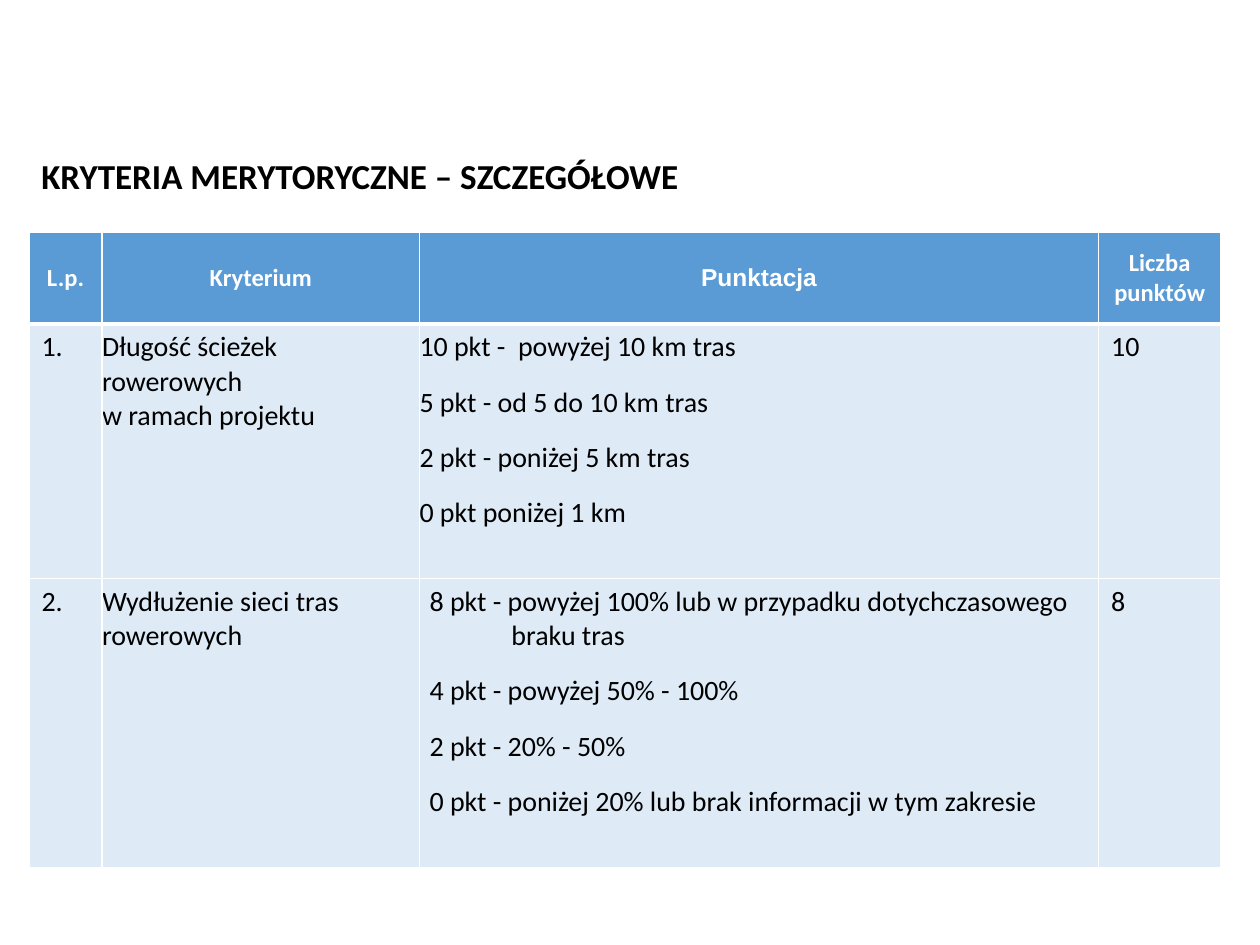
from dataclasses import dataclass

from pptx import Presentation
from pptx.dml.color import RGBColor
from pptx.enum import text
from pptx.oxml import parse_xml
from pptx.oxml.ns import nsdecls
from pptx.util import Inches, Pt

BLACK = RGBColor(0x00, 0x00, 0x00)
WHITE = RGBColor(0xFF, 0xFF, 0xFF)
HEADER_BLUE = RGBColor(0x5B, 0x9B, 0xD5)
ROW_BLUE = RGBColor(0xDE, 0xEB, 0xF7)

COLUMN_WIDTHS = (0.58, 2.52, 5.39, 0.97)
ROW_HEIGHTS = (0.73, 2.02, 2.3)
HEADINGS = ("L.p.", "Kryterium", "Punktacja", "Liczba punktów")


@dataclass
class Criterion:
    number: str
    name: str
    scoring: list[str]
    points: str
    scoring_margin: float = 0


@dataclass
class CellStyle:
    fill: RGBColor
    color: RGBColor
    size: int
    font: str = "Calibri"
    bold: bool = False
    centered: bool = False
    side_margin: float = 0.1
    spacing: int = 0
    bottom_border: int = 1


CRITERIA = [
    Criterion("1.", "Długość ścieżek rowerowych \vw ramach projektu",
              ["10 pkt -  powyżej 10 km tras", "5 pkt - od 5 do 10 km tras",
               "2 pkt - poniżej 5 km tras", "0 pkt poniżej 1 km"], "10"),
    Criterion("2.", "Wydłużenie sieci tras rowerowych",
              ["8 pkt - powyżej 100% lub w przypadku dotychczasowego\vbraku tras",
               "4 pkt - powyżej 50% - 100%", "2 pkt - 20% - 50%",
               "0 pkt - poniżej 20% lub brak informacji w tym zakresie"], "8", 0.08),
]


def format_font(font, name: str, size: int, color: RGBColor, bold: bool) -> None:
    font.name = name
    font.size = Pt(size)
    font.color.rgb = color
    font.bold = bold


def add_borders(cell, bottom: int) -> None:
    properties = cell._tc.get_or_add_tcPr()
    for side, width in (("L", 1), ("R", 1), ("T", 1), ("B", bottom)):
        properties.append(parse_xml(
            f'<a:ln{side} {nsdecls("a")} w="{Pt(width)}"><a:solidFill>'
            f'<a:srgbClr val="{WHITE}"/></a:solidFill></a:ln{side}>'))


def fill_cell(cell, lines: list[str], style: CellStyle) -> None:
    add_borders(cell, style.bottom_border)
    cell.fill.solid()
    cell.fill.fore_color.rgb = style.fill
    cell.margin_left = cell.margin_right = Inches(style.side_margin)
    cell.margin_top = cell.margin_bottom = Inches(0.05)
    cell.vertical_anchor = (text.MSO_ANCHOR.MIDDLE if style.centered
                            else text.MSO_ANCHOR.TOP)
    cell.text_frame.text = lines[0]
    for line in lines[1:]:
        cell.text_frame.add_paragraph().text = line
    for index, paragraph in enumerate(cell.text_frame.paragraphs):
        paragraph.alignment = (text.PP_ALIGN.CENTER if style.centered
                               else text.PP_ALIGN.LEFT)
        paragraph.space_before = Pt(style.spacing if index else 0)
        paragraph.space_after = Pt(style.spacing)
        for run in paragraph.runs:
            format_font(run.font, style.font, style.size, style.color, style.bold)


def hang_indent(paragraph, width: float) -> None:
    properties = paragraph._p.get_or_add_pPr()
    properties.set("marL", str(Inches(width)))
    properties.set("indent", str(-Inches(width)))


def add_title(slide) -> None:
    title = slide.shapes.add_textbox(Inches(0.23), Inches(1.17),
                                     Inches(5.42), Inches(0.44))
    frame = title.text_frame
    frame.text = "KRYTERIA MERYTORYCZNE – SZCZEGÓŁOWE"
    frame.word_wrap = False
    frame.auto_size = text.MSO_AUTO_SIZE.SHAPE_TO_FIT_TEXT
    frame.vertical_anchor = text.MSO_ANCHOR.MIDDLE
    format_font(frame.paragraphs[0].runs[0].font, "Calibri", 20, BLACK, True)


def add_criteria_table(slide) -> None:
    table = slide.shapes.add_table(
        len(ROW_HEIGHTS), len(COLUMN_WIDTHS), Inches(0.23), Inches(1.84),
        Inches(sum(COLUMN_WIDTHS)), Inches(sum(ROW_HEIGHTS))).table
    for column, width in zip(table.columns, COLUMN_WIDTHS):
        column.width = Inches(width)
    for row, height in zip(table.rows, ROW_HEIGHTS):
        row.height = Inches(height)

    # Header row
    for column, heading in enumerate(HEADINGS):
        font = "Arial" if heading == "Punktacja" else "Calibri"
        fill_cell(table.cell(0, column), [heading],
                  CellStyle(HEADER_BLUE, WHITE, 14, font, bold=True,
                            centered=True, bottom_border=3))

    # Criteria rows
    plain = CellStyle(ROW_BLUE, BLACK, 16)
    flush = CellStyle(ROW_BLUE, BLACK, 16, side_margin=0, spacing=6)
    for row, criterion in enumerate(CRITERIA, start=1):
        scoring = CellStyle(ROW_BLUE, BLACK, 16, spacing=6,
                            side_margin=criterion.scoring_margin)
        fill_cell(table.cell(row, 0), [criterion.number], plain)
        fill_cell(table.cell(row, 1), [criterion.name], flush)
        fill_cell(table.cell(row, 2), criterion.scoring, scoring)
        fill_cell(table.cell(row, 3), [criterion.points], plain)
        for paragraph in table.cell(row, 2).text_frame.paragraphs:
            if "\v" in paragraph.text:
                hang_indent(paragraph, 0.65)


def main() -> None:
    presentation = Presentation()
    presentation.slide_width = Inches(10)
    presentation.slide_height = Inches(7.5)
    slide = presentation.slides.add_slide(presentation.slide_layouts[6])
    add_title(slide)
    add_criteria_table(slide)
    presentation.save("out.pptx")


if __name__ == "__main__":
    main()
